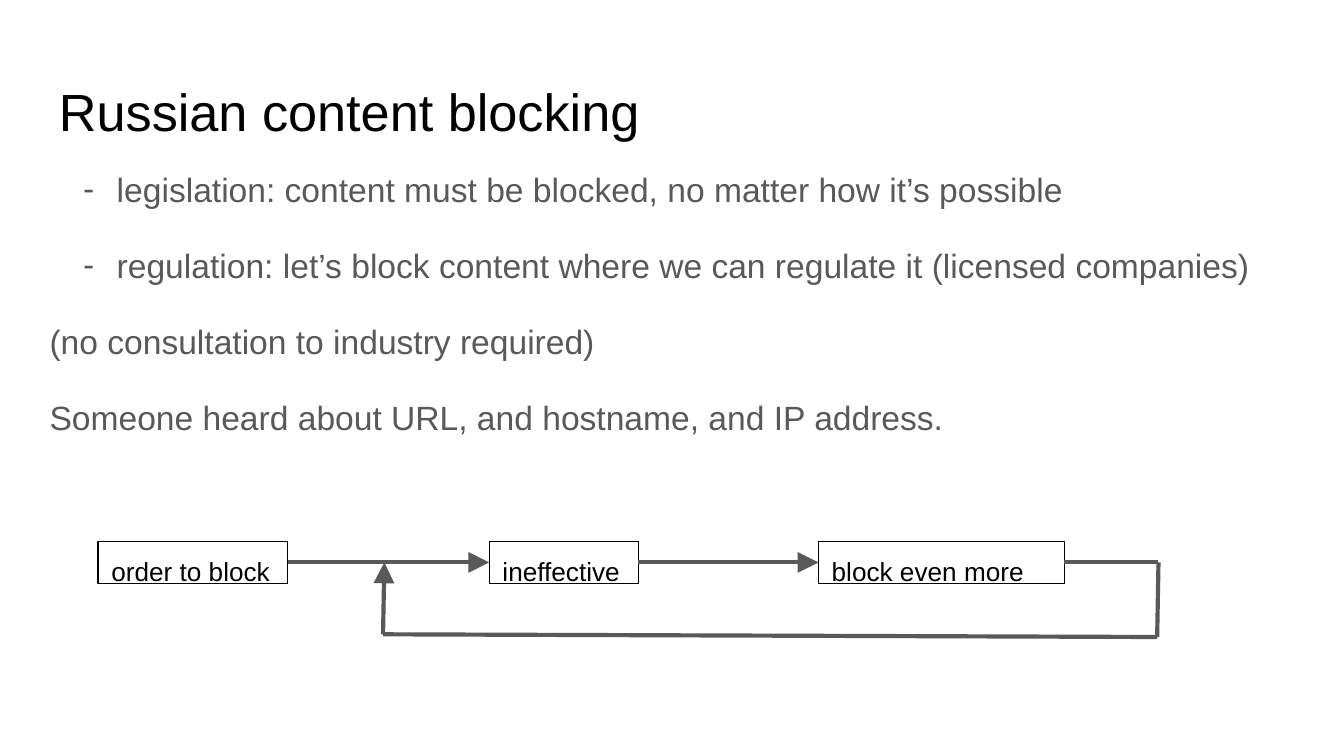
from dataclasses import dataclass
from itertools import pairwise

from lxml import etree
from pptx import Presentation
from pptx.dml.color import RGBColor
from pptx.enum import shapes, text
from pptx.oxml import ns
from pptx.util import Emu, Inches, Pt

COLS, ROWS = 100, 56.25
BOX_TOP, BOX_ROWS = 40.3, 3.1
FLOW_ROW = BOX_TOP + BOX_ROWS / 2
BLACK, GREY = "000000", "595959"

prs = Presentation()
prs.slide_width = Inches(10)
prs.slide_height = Emu(prs.slide_width * 9 // 16)
sp_tree = prs.slides.add_slide(prs.slide_layouts[6]).shapes


@dataclass
class Step:
    label: str
    col: float
    cols: float

    @property
    def end(self) -> float:
        return self.col + self.cols


@dataclass
class Line:
    words: str
    dash: bool = False


def color(value: str) -> RGBColor:
    return RGBColor.from_string(value)


def x(col: float) -> Emu:
    return Emu(round(prs.slide_width * col / COLS))


def y(row: float) -> Emu:
    return Emu(round(prs.slide_height * row / ROWS))


def sub(parent, tag: str, **attrs: str):
    return etree.SubElement(parent, ns.qn(tag), attrs)


def frame(sp):
    tf = sp.text_frame
    tf.word_wrap = True
    tf.vertical_anchor = text.MSO_ANCHOR.TOP
    tf.margin_left = tf.margin_right = tf.margin_top = tf.margin_bottom = Inches(0.1)
    return tf


def write(p, words: str, *, size: float, fill: str = BLACK, spacing: float = 1,
          after: float = 0, dash: bool = False) -> None:
    p.alignment = text.PP_ALIGN.LEFT
    p.line_spacing = spacing
    p.space_after = Pt(after)
    r = p.add_run()
    r.text = words
    r.font.size, r.font.name = Pt(size), "Arial"
    r.font.color.rgb = color(fill)
    if dash:
        pPr = p._p.get_or_add_pPr()
        pPr.set("marL", str(Inches(0.5)))
        pPr.set("indent", str(-Inches(0.25)))
        sub(sub(pPr, "a:buClr"), "a:srgbClr", val=fill)
        sub(pPr, "a:buFont", typeface="Arial")
        sub(pPr, "a:buChar", char="-")


def draw_step(step: Step) -> None:
    sp = sp_tree.add_shape(shapes.MSO_SHAPE.RECTANGLE,
                           x(step.col), y(BOX_TOP), x(step.cols), y(BOX_ROWS))
    sp.shadow.inherit = False
    sp.fill.background()
    sp.line.color.rgb = color(BLACK)
    sp.line.width = Pt(0.75)
    write(frame(sp).paragraphs[0], step.label, size=14)


def draw_line(start: tuple[float, float], end: tuple[float, float],
              arrow: bool = False) -> None:
    sp = sp_tree.add_connector(shapes.MSO_CONNECTOR.STRAIGHT,
                               x(start[0]), y(start[1]), x(end[0]), y(end[1]))
    sp.line.color.rgb = color(GREY)
    sp.line.width = Pt(2.25)
    if arrow:
        sub(sp.line._get_or_add_ln(), "a:tailEnd", type="triangle", w="lg", len="lg")
    sub(sp._element.spPr, "a:effectLst")


title = sp_tree.add_textbox(x(3.4), y(4.9), x(93.2), y(6.3))
write(frame(title).paragraphs[0], "Russian content blocking", size=28)

lines = [
    Line("legislation: content must be blocked, no matter how it’s possible", dash=True),
    Line("regulation: let’s block content where we can regulate it (licensed companies)",
         dash=True),
    Line("(no consultation to industry required)"),
    Line("Someone heard about URL, and hostname, and IP address."),
]
tf = frame(sp_tree.add_textbox(x(2.7), y(11.1), x(93.2), y(37.4)))
for i, line in enumerate(lines):
    p = tf.add_paragraph() if i else tf.paragraphs[0]
    write(p, line.words, size=18, fill=GREY, spacing=1.15, after=16, dash=line.dash)

steps = [
    Step("order to block", 7.3, 14.1),
    Step("ineffective", 36.4, 11.1),
    Step("block even more", 60.9, 18.3),
]
for step in steps:
    draw_step(step)
for before, following in pairwise(steps):
    draw_line((before.end, FLOW_ROW), (following.col, FLOW_ROW), arrow=True)

loop = [(steps[-1].end, FLOW_ROW), (86.2, FLOW_ROW), (86.1, 47.4),
        (28.5, 47.2), (28.6, FLOW_ROW)]
for start, end in pairwise(loop):
    draw_line(start, end, arrow=end == loop[-1])

prs.save("out.pptx")
